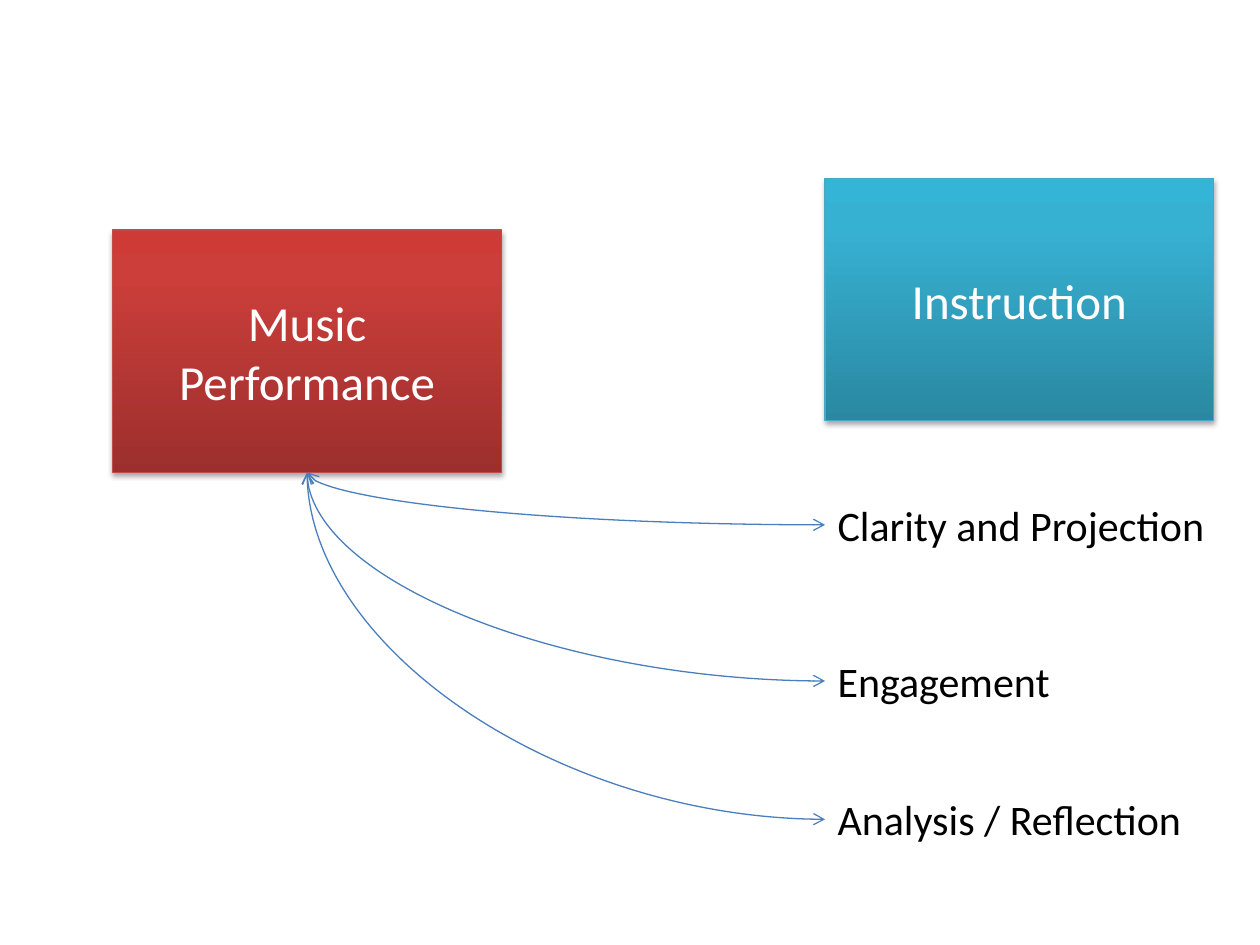
from typing import NamedTuple

from lxml import etree
from pptx import Presentation
from pptx.dml.color import RGBColor
from pptx.enum.shapes import MSO_CONNECTOR, MSO_SHAPE
from pptx.enum.text import MSO_ANCHOR, MSO_AUTO_SIZE, PP_ALIGN
from pptx.oxml import parse_xml
from pptx.oxml.ns import nsdecls, qn
from pptx.util import Pt

RECTANGLE = MSO_SHAPE.RECTANGLE
CURVE = MSO_CONNECTOR.CURVE
MIDDLE, TOP = MSO_ANCHOR.MIDDLE, MSO_ANCHOR.TOP
CENTER, LEFT = PP_ALIGN.CENTER, PP_ALIGN.LEFT
GROW = MSO_AUTO_SIZE.SHAPE_TO_FIT_TEXT

WHITE = RGBColor(0xFF, 0xFF, 0xFF)
BLACK = RGBColor(0, 0, 0)
ARROW_BLUE = RGBColor(0x4B, 0x7E, 0xBC)
RED_LINE = RGBColor(0xBF, 0x4C, 0x48)
RED_STOPS = {0: RGBColor(0x9C, 0x2F, 0x2D), 80: RGBColor(0xCB, 0x3E, 0x3A),
             100: RGBColor(0xCE, 0x3B, 0x37)}
TEAL_LINE = RGBColor(0x46, 0xAA, 0xC5)
TEAL_STOPS = {0: RGBColor(0x2A, 0x88, 0xA2), 80: RGBColor(0x37, 0xB1, 0xD2),
              100: RGBColor(0x34, 0xB4, 0xD6)}

FONT = "Calibri"
LINE_WIDTH = Pt(0.75)
BOX_WIDTH, BOX_HEIGHT = Pt(222), Pt(138.5)
RIGHT_COLUMN = Pt(471.5)
LABEL_WIDTH, LABEL_HEIGHT = Pt(228), Pt(36.35)
BOTTOM_SITE, LEFT_SITE = 2, 1


class Box(NamedTuple):
    text: str
    left: int
    top: int
    stops: dict[int, RGBColor]
    line: RGBColor


class Label(NamedTuple):
    text: str
    top: int


PERFORMANCE = Box("Music Performance", Pt(64.5), Pt(131.5), RED_STOPS, RED_LINE)
INSTRUCTION = Box("Instruction", RIGHT_COLUMN, Pt(102), TEAL_STOPS, TEAL_LINE)
LABELS = [
    Label("Clarity and Projection", Pt(281.75)),
    Label("Engagement", Pt(371)),
    Label("Analysis / Reflection", Pt(450)),
]


def write_text(shape, text: str, *, size: int, color: RGBColor,
               align=LEFT, anchor=TOP) -> None:
    frame = shape.text_frame
    frame.word_wrap = True
    frame.vertical_anchor = anchor
    paragraph = frame.paragraphs[0]
    paragraph.alignment = align
    run = paragraph.add_run()
    run.text = text
    run.font.name = FONT
    run.font.size = Pt(size)
    run.font.color.rgb = color


def set_gradient(shape, stops: dict[int, RGBColor]) -> None:
    """Fill the shape with a gradient that runs from bottom to top."""
    shape.fill.gradient()
    gradient = shape._element.spPr.find(qn("a:gradFill"))
    for child in list(gradient):
        gradient.remove(child)
    stop_list = etree.SubElement(gradient, qn("a:gsLst"))
    for position, color in stops.items():
        stop = etree.SubElement(stop_list, qn("a:gs"), pos=str(position * 1000))
        etree.SubElement(stop, qn("a:srgbClr"), val=str(color))
    etree.SubElement(gradient, qn("a:lin"), ang="16200000", scaled="0")


def add_shadow(shape) -> None:
    shape.shadow.inherit = False
    effects = shape._element.spPr.find(qn("a:effectLst"))
    effects.append(parse_xml(
        f'<a:outerShdw {nsdecls("a")} blurRad="{Pt(3.1)}" dist="{Pt(1.8)}" '
        'dir="5400000" rotWithShape="0"><a:srgbClr val="000000">'
        '<a:alpha val="35000"/></a:srgbClr></a:outerShdw>'))


def add_box(slide, box: Box):
    shape = slide.shapes.add_shape(
        RECTANGLE, box.left, box.top, BOX_WIDTH, BOX_HEIGHT)
    set_gradient(shape, box.stops)
    shape.line.color.rgb = box.line
    shape.line.width = LINE_WIDTH
    add_shadow(shape)
    write_text(shape, box.text, size=28, color=WHITE, align=CENTER, anchor=MIDDLE)
    return shape


def add_label(slide, label: Label):
    shape = slide.shapes.add_textbox(
        RIGHT_COLUMN, label.top, LABEL_WIDTH, LABEL_HEIGHT)
    write_text(shape, label.text, size=24, color=BLACK)
    shape.text_frame.auto_size = GROW
    return shape


def add_curved_arrow(slide, source, target) -> None:
    """Join the source's bottom to the target's left with a quarter curve."""
    start_x, start_y = source.left + source.width // 2, source.top + source.height
    end_x, end_y = target.left, target.top + target.height // 2
    connector = slide.shapes.add_connector(CURVE, start_x, start_y, end_x, end_y)
    connector.begin_connect(source, BOTTOM_SITE)
    connector.end_connect(target, LEFT_SITE)

    # The frame is turned a quarter, so width and height change places
    connector.width, connector.height = end_y - start_y, end_x - start_x
    connector.left = (start_x + end_x - connector.width) // 2
    connector.top = (start_y + end_y - connector.height) // 2
    properties = connector._element.spPr
    transform = properties.find(qn("a:xfrm"))
    transform.set("rot", "16200000")
    transform.set("flipH", "1")
    properties.find(qn("a:prstGeom")).set("prst", "curvedConnector2")

    connector.line.color.rgb = ARROW_BLUE
    connector.line.width = LINE_WIDTH
    line = properties.find(qn("a:ln"))
    for end in ("a:headEnd", "a:tailEnd"):
        etree.SubElement(line, qn(end), type="arrow")
    etree.SubElement(properties, qn("a:effectLst"))


def main() -> None:
    presentation = Presentation()
    presentation.slide_width, presentation.slide_height = Pt(720), Pt(540)
    slide = presentation.slides.add_slide(presentation.slide_layouts[6])

    # Boxes
    performance = add_box(slide, PERFORMANCE)
    add_box(slide, INSTRUCTION)

    # Shared qualities, each tied to the performance box
    for label in LABELS:
        add_curved_arrow(slide, performance, add_label(slide, label))

    presentation.save("out.pptx")


if __name__ == "__main__":
    main()
